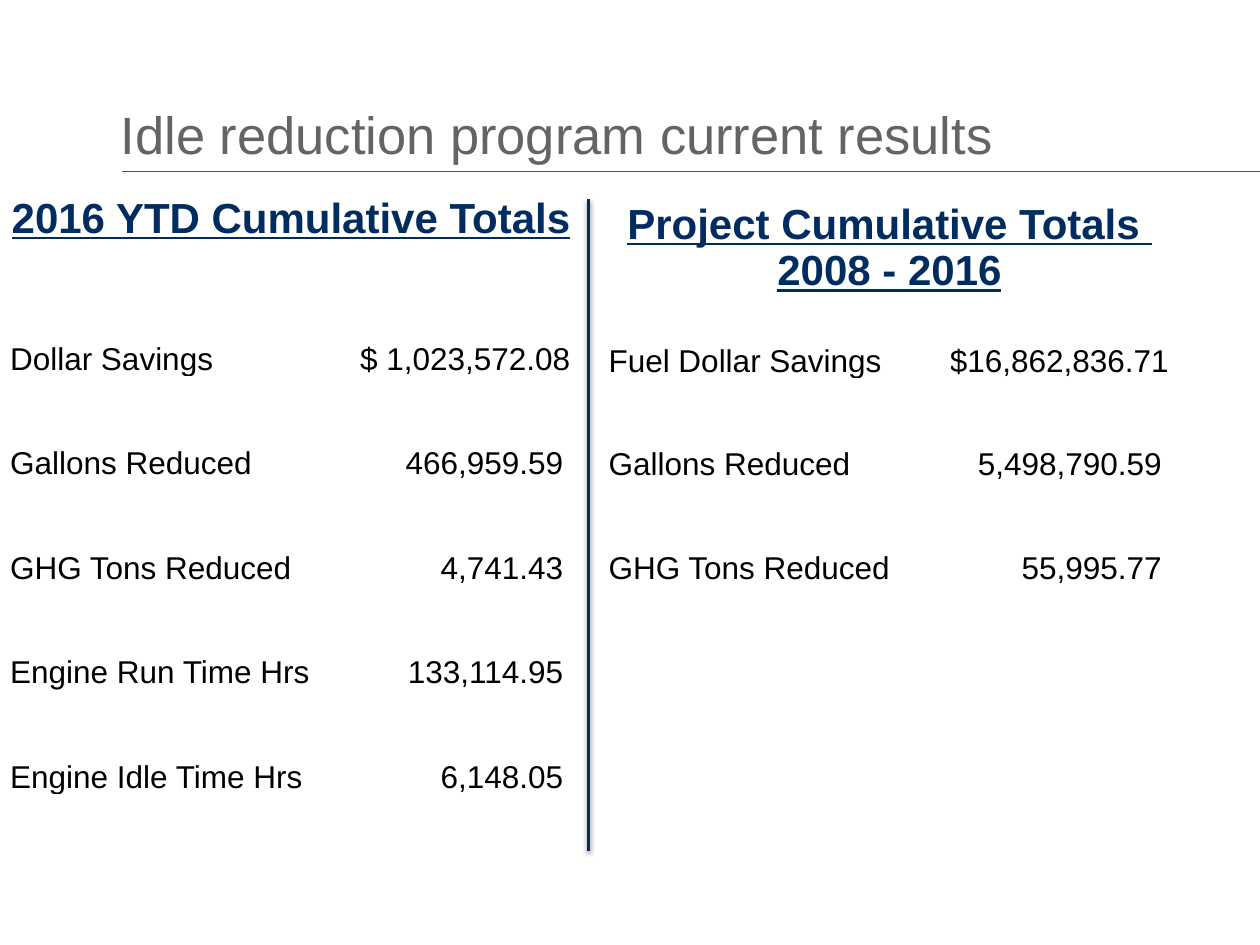
from lxml.etree import SubElement
from pptx import Presentation
from pptx.dml.color import RGBColor
from pptx.enum.shapes import MSO_CONNECTOR
from pptx.enum.text import MSO_ANCHOR, PP_ALIGN
from pptx.oxml.ns import qn
from pptx.util import Inches, Pt

NAVY = RGBColor(0x00, 0x2C, 0x5F)
RED = RGBColor(0xE6, 0x0D, 0x2E)
GRAY = RGBColor(0x64, 0x64, 0x64)
BLACK = RGBColor(0, 0, 0)
COLS = (2.67, 0.03, 1.75)

YEAR = [
    ("Dollar Savings", " $ 1,023,572.08"),
    ("Gallons Reduced", "466,959.59 "),
    ("GHG Tons Reduced", "4,741.43 "),
    ("Engine Run Time Hrs", "133,114.95 "),
    ("Engine Idle Time Hrs", "6,148.05 "),
]
TOTAL = [
    ("Fuel Dollar Savings", " $16,862,836.71"),
    ("Gallons Reduced", "5,498,790.59 "),
    ("GHG Tons Reduced", "55,995.77 "),
]


def add_run(para, text, size, color, bold=False):
    run = para.add_run()
    run.text = text
    font = run.font
    font.name, font.size, font.bold = "Arial", Pt(size), bold
    font.underline = bold
    font.color.rgb = color


def add_line(slide, x1, y1, x2, y2, color, width):
    line = slide.shapes.add_connector(
        MSO_CONNECTOR.STRAIGHT, Inches(x1), Inches(y1), Inches(x2), Inches(y2))
    line.line.color.rgb = color
    line.line.width = Pt(width)
    return SubElement(line._element.spPr, qn("a:effectLst"))


def add_title(slide, left, top, width, height):
    box = slide.shapes.add_textbox(
        Inches(left), Inches(top), Inches(width), Inches(height))
    frame = box.text_frame
    frame.word_wrap = True
    frame.vertical_anchor = MSO_ANCHOR.BOTTOM
    para = frame.paragraphs[0]
    para.line_spacing = Pt(30)
    add_run(para, "Idle reduction program current results", 30, GRAY)
    # Rule under the title, starting at the text edge
    base = top + height
    add_line(slide, left + width, base, left + 0.11, base, RED, 0.75)


def add_divider(slide, x, top, bottom):
    effects = add_line(slide, x, top, x, bottom, NAVY, 2)
    # Soft shadow below the line
    shadow = SubElement(effects, qn("a:outerShdw"), blurRad=str(Pt(3.1)),
                        dist=str(Pt(1.6)), dir="5400000", rotWithShape="0")
    color = SubElement(shadow, qn("a:srgbClr"), val="000000")
    SubElement(color, qn("a:alpha"), val="38000")


def add_totals(slide, left, top, heights, heading, items):
    table = slide.shapes.add_table(
        len(heights), len(COLS), Inches(left), Inches(top),
        Inches(sum(COLS)), Inches(sum(heights))).table
    table.first_row = table.horz_banding = False
    for col, width in zip(table.columns, COLS):
        col.width = Inches(width)
    for row, height in zip(table.rows, heights):
        row.height = Inches(height)
    for cell in table.iter_cells():
        cell.fill.background()
        cell.vertical_anchor = MSO_ANCHOR.BOTTOM
        cell.margin_left = cell.margin_right = 0
        cell.margin_top = cell.margin_bottom = 0

    # Heading across all columns
    head = table.cell(0, 0)
    head.merge(table.cell(0, len(COLS) - 1))
    frame = head.text_frame
    for i, text in enumerate(heading):
        para = frame.add_paragraph() if i else frame.paragraphs[0]
        para.alignment = PP_ALIGN.CENTER
        add_run(para, text, 24, NAVY, True)

    # Labels and values; dollar amounts fill their column from the left
    for i, (label, value) in enumerate(items, 1):
        add_run(table.cell(i, 0).text_frame.paragraphs[0], label, 18, BLACK)
        para = table.cell(i, 2).text_frame.paragraphs[0]
        para.alignment = PP_ALIGN.LEFT if "$" in value else PP_ALIGN.RIGHT
        add_run(para, value, 18, BLACK)


def main():
    deck = Presentation()
    deck.slide_width, deck.slide_height = Inches(10), Inches(7.5)
    slide = deck.slides.add_slide(deck.slide_layouts[6])
    add_title(slide, 0.86, 0.33, 9.14, 1.03)
    add_totals(slide, 0.08, 1.42, [0.5, 1.07] + [0.83] * 4,
               ["2016 YTD Cumulative Totals"], YEAR)
    add_divider(slide, 4.67, 1.58, 6.75)
    add_totals(slide, 4.83, 1.42, [0.92, 0.67] + [0.82] * 4,
               ["Project Cumulative Totals ", "2008 - 2016"], TOTAL)
    deck.save("out.pptx")


if __name__ == "__main__":
    main()
